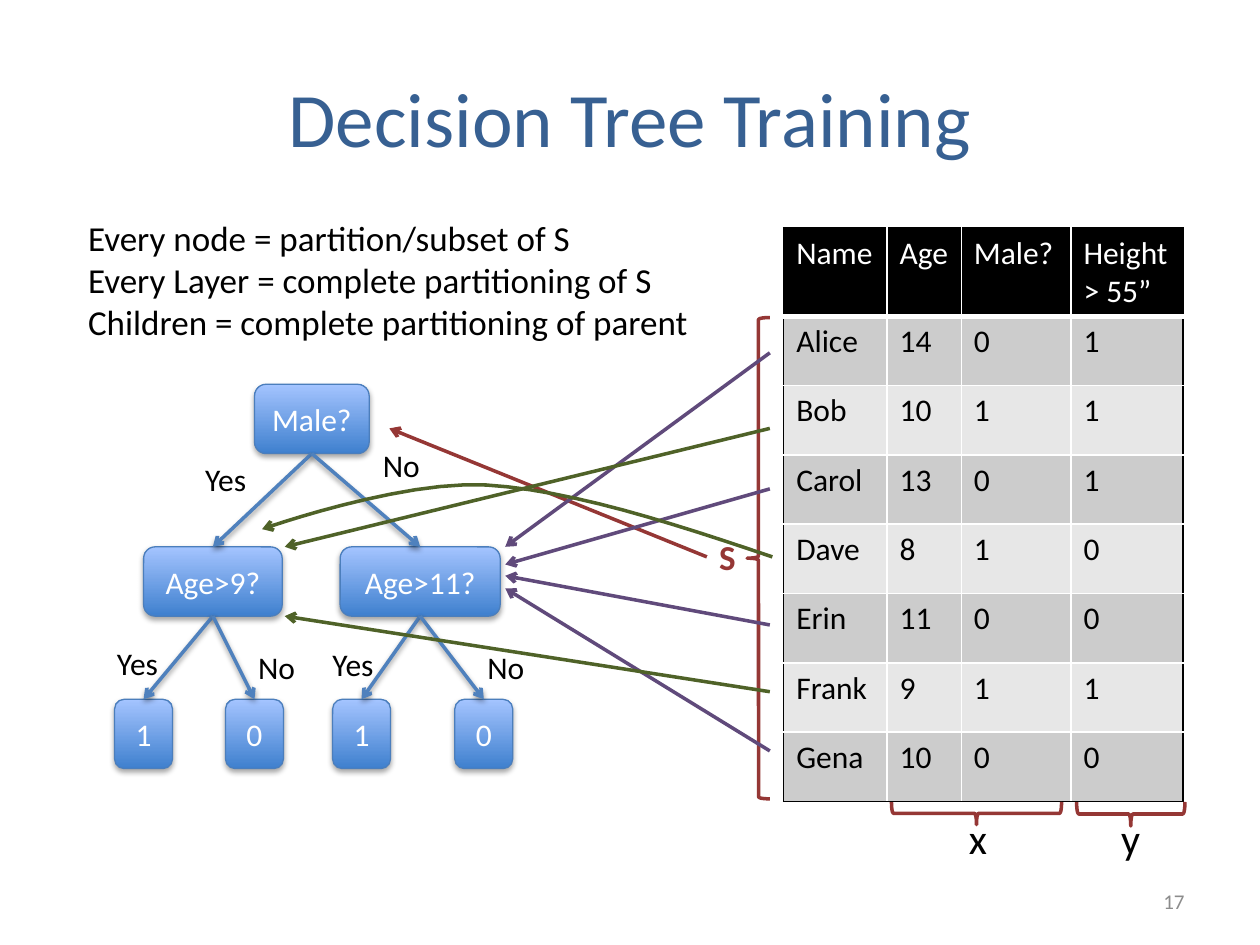
from dataclasses import dataclass
from lxml import etree
from pptx import Presentation
from pptx import util as u
from pptx.dml import color
from pptx.enum import shapes, text
from pptx.oxml import ns


@dataclass(frozen=True)
class Theme:
    """Colours and type sizes of the slide."""
    font: str = "Calibri"
    title: str = "376092"
    ink: str = "000000"
    paper: str = "FFFFFF"
    muted: str = "8C8C8C"
    edge: str = "4F81BD"
    node_line: str = "4B7EBC"
    node_low: str = "3F80CE"
    node_high: str = "A4C4FF"
    red: str = "953735"
    purple: str = "604A7B"
    green: str = "4F6228"
    bands: tuple = ("CCCCCC", "E7E7E7")
    title_size: int = 44
    variable_size: int = 24
    rule_size: int = 20
    text_size: int = 18
    number_size: int = 12


@dataclass(frozen=True)
class Box:
    """A region in inches."""
    left: float
    top: float
    width: float
    height: float

    def inner(self, x, y, width=0, height=0):
        """Return a box placed relative to this one."""
        return Box(self.left + x, self.top + y, width, height)

    def emu(self):
        """Return the four lengths."""
        return [u.Inches(v) for v in (self.left, self.top, self.width, self.height)]


THEME = Theme()
ROWS = [
    ("Name", "Age", "Male?", "Height > 55”"),
    ("Alice", "14", "0", "1"),
    ("Bob", "10", "1", "1"),
    ("Carol", "13", "0", "1"),
    ("Dave", "8", "1", "0"),
    ("Erin", "11", "0", "0"),
    ("Frank", "9", "1", "1"),
    ("Gena", "10", "0", "0"),
]


def rgb(value):
    """Return a colour from its hex code."""
    return color.RGBColor.from_string(value)


def child(parent, tag, **attributes):
    """Append a DrawingML element."""
    return etree.SubElement(parent, ns.qn(tag), attributes)


def style_text(frame, size, ink, align=None, bold=None):
    """Format every run of a text frame."""
    for paragraph in frame.paragraphs:
        paragraph.alignment = align
        for run in paragraph.runs:
            run.font.name, run.font.size = THEME.font, u.Pt(size)
            run.font.color.rgb, run.font.bold = rgb(ink), bold


def add_label(slide, box, words, size=THEME.text_size, ink=THEME.ink, align=None, bold=None):
    """Add an unwrapped line of text or several."""
    frame = slide.shapes.add_textbox(*box.emu()).text_frame
    frame.text, frame.word_wrap = words, False
    style_text(frame, size, ink, align, bold)
    return frame


def set_shadow(shape, opacity=None, distance=0):
    """Replace the theme shadow by a soft one below, or by none."""
    effects = child(shape._element.spPr, "a:effectLst")
    if opacity:
        shadow = child(effects, "a:outerShdw", blurRad="40000", dist=str(distance),
                       dir="5400000", rotWithShape="0")
        child(child(shadow, "a:srgbClr", val=THEME.ink), "a:alpha", val=str(opacity * 1000))


def set_stroke(shape, ink, arrow=False):
    """Give a shape a two-point line with an optional arrowhead."""
    shape.line.color.rgb, shape.line.width = rgb(ink), u.Pt(2)
    if arrow:
        child(shape.line._get_or_add_ln(), "a:tailEnd", type="arrow")


def add_arrow(slide, start, end, ink, opacity=None):
    """Draw a straight arrow between two boxes' corners."""
    points = [u.Inches(v) for v in (start.left, start.top, end.left, end.top)]
    arrow = slide.shapes.add_connector(shapes.MSO_CONNECTOR.STRAIGHT, *points)
    set_stroke(arrow, ink, arrow=True)
    set_shadow(arrow, opacity, 20000)


def add_node(slide, box, words):
    """Draw one node of the tree."""
    node = slide.shapes.add_shape(shapes.MSO_SHAPE.ROUNDED_RECTANGLE, *box.emu())
    node.fill.gradient()
    node.fill.gradient_angle = 90
    for stop, ink in zip(node.fill.gradient_stops, (THEME.node_low, THEME.node_high)):
        stop.color.rgb = rgb(ink)
    node.line.color.rgb, node.line.width = rgb(THEME.node_line), u.Pt(0.75)
    set_shadow(node, 35, 23000)
    frame = node.text_frame
    frame.text, frame.word_wrap = words, False
    frame.vertical_anchor = text.MSO_ANCHOR.MIDDLE
    style_text(frame, THEME.text_size, THEME.paper, text.PP_ALIGN.CENTER)


def add_tree(slide, box):
    """Draw the decision tree with its branches."""
    height = 0.55
    nodes = [("Male?", 1.11, 0, 0.91), ("Age>9?", 0.23, 1.29, 1.1), ("Age>11?", 1.79, 1.29, 1.27),
             ("1", 0, 2.5, 0.46), ("0", 0.88, 2.5, 0.46), ("1", 1.73, 2.5, 0.46), ("0", 2.7, 2.5, 0.46)]
    for words, x, y, width in nodes:
        add_node(slide, box.inner(x, y, width, height), words)
    for index in range(1, len(nodes)):
        (_, px, py, pw), (_, x, y, width) = nodes[(index - 1) // 2], nodes[index]
        add_arrow(slide, box.inner(px + pw / 2, py + height), box.inner(x + width / 2, y), THEME.edge, 38)
    answers = {"Yes": (0.55, [(0.62, 0.55), (-0.08, 2.01), (1.63, 2.02)]),
               "No": (0.5, [(2.03, 0.44), (1.04, 2.04), (2.86, 2.04)])}
    for words, (width, places) in answers.items():
        for x, y in places:
            add_label(slide, box.inner(x, y, width, 0.4), words)


def set_borders(cell, left, right, top, bottom):
    """Draw the four borders of a cell from colour and width pairs."""
    properties = cell._tc.get_or_add_tcPr()
    for index, (side, (ink, width)) in enumerate(zip("LRTB", (left, right, top, bottom))):
        border = etree.Element(ns.qn("a:ln" + side), w=str(u.Pt(width)))
        child(child(border, "a:solidFill"), "a:srgbClr", val=ink)
        properties.insert(index, border)


def add_people(slide, box):
    """Build the table of training examples."""
    table = slide.shapes.add_table(len(ROWS), len(ROWS[0]), *box.emu()).table
    for column, width in zip(table.columns, (0.82, 0.59, 0.87, 0.89)):
        column.width = u.Inches(width)
    outer, inner, heavy = (THEME.ink, 1), (THEME.paper, 1), (THEME.paper, 3)
    last_row, last_column = len(ROWS) - 1, len(ROWS[0]) - 1
    for r, values in enumerate(ROWS):
        table.rows[r].height = u.Inches(0.55 if r else 0.66)
        for c, value in enumerate(values):
            cell = table.cell(r, c)
            cell.text = value
            style_text(cell.text_frame, THEME.text_size, THEME.ink if r else THEME.paper)
            cell.fill.solid()
            cell.fill.fore_color.rgb = rgb(THEME.bands[(r - 1) % 2] if r else THEME.ink)
            set_borders(cell, inner if c else outer, outer if c == last_column else inner,
                        (heavy if r == 1 else inner) if r else outer,
                        outer if r == last_row else inner if r else heavy)


def add_brace(slide, box, rotation=0):
    """Draw a red brace."""
    brace = slide.shapes.add_shape(shapes.MSO_SHAPE.LEFT_BRACE, *box.emu())
    brace.rotation = rotation
    brace.fill.background()
    set_stroke(brace, THEME.red)
    set_shadow(brace)


def add_notation(slide, box):
    """Mark the set S and the variables x and y around the table."""
    add_brace(slide, box.inner(-0.29, 0.71, 0.18, 3.82))
    add_label(slide, box.inner(-0.61, 2.39, 0.33, 0.44), "S", THEME.rule_size, THEME.red, bold=True)
    add_brace(slide, box.inner(1.44, 3.97, 0.18, 1.35), 270)
    add_brace(slide, box.inner(2.66, 4.22, 0.19, 0.86), 270)
    for words, x in (("x", 1.37), ("y", 2.58)):
        add_label(slide, box.inner(x, 4.59, 0.35, 0.5), words, THEME.variable_size)


def bezier(points, t):
    """Return the point at t on a cubic curve."""
    weights = ((1 - t) ** 3, 3 * t * (1 - t) ** 2, 3 * t * t * (1 - t), t ** 3)
    return tuple(sum(w * p[axis] for w, p in zip(weights, points)) for axis in (0, 1))


def add_links(slide, box):
    """Link the examples to the nodes that hold them."""
    add_arrow(slide, box.inner(3.61, 1.62), box.inner(1.09, 0.6), THEME.red)
    links = [(THEME.purple, 2.01, [(0, 1.54), (1.08, 1.68), (2.16, 1.77), (3.16, 1.87)]),
             (THEME.green, 0.26, [(0.6, 1.54), (2.69, 2.09)])]
    for ink, x, ends in links:
        for start, end in ends:
            add_arrow(slide, box.inner(box.width, start), box.inner(x, end), ink)
    anchors = [(4.13, 1.62), (3.33, 1.35), (2.53, 1.09), (1.86, 1.05), (1.18, 1.01), (0.08, 1.4), (0.08, 1.4)]
    curve = [bezier(anchors[i:i + 4], step / 12) for i in (0, 3) for step in range(13)]
    route = [tuple(box.inner(*point).emu()[:2]) for point in curve]
    builder = slide.shapes.build_freeform(*route[0])
    builder.add_line_segments(route[1:], close=False)
    dave = builder.convert_to_shape()
    dave.fill.background()
    set_stroke(dave, THEME.green, arrow=True)
    set_shadow(dave)


def add_heading(slide, box):
    """Fill the title placeholder."""
    title = slide.shapes.title
    title.left, title.top, title.width, title.height = box.emu()
    title.text_frame.text = "Decision Tree Training"
    title.text_frame.vertical_anchor = text.MSO_ANCHOR.MIDDLE
    style_text(title.text_frame, THEME.title_size, THEME.title, text.PP_ALIGN.CENTER)


def main():
    """Build and save the slide."""
    deck = Presentation()
    deck.slide_width, deck.slide_height = u.Inches(10), u.Inches(7.5)
    slide = deck.slides.add_slide(deck.slide_layouts[5])
    add_heading(slide, Box(0.5, 0.3, 9, 1.25))
    add_tree(slide, Box(0.91, 3.05, 3.16, 3.05))
    add_label(slide, Box(0.6, 1.67, 5.02, 1.11), "Every node = partition/subset of S\n"
              "Every Layer = complete partitioning of S\n"
              "Children = complete partitioning of parent", THEME.rule_size)
    people = Box(6.22, 1.81, 3.17, 4.53)
    add_people(slide, people)
    add_notation(slide, people)
    add_links(slide, Box(2, 2.8, 4.11, 3.16))
    number = add_label(slide, Box(7.17, 6.95, 2.33, 0.4), "17", THEME.number_size, THEME.muted,
                       text.PP_ALIGN.RIGHT)
    number.word_wrap, number.vertical_anchor = True, text.MSO_ANCHOR.MIDDLE
    deck.save("out.pptx")


if __name__ == "__main__":
    main()
